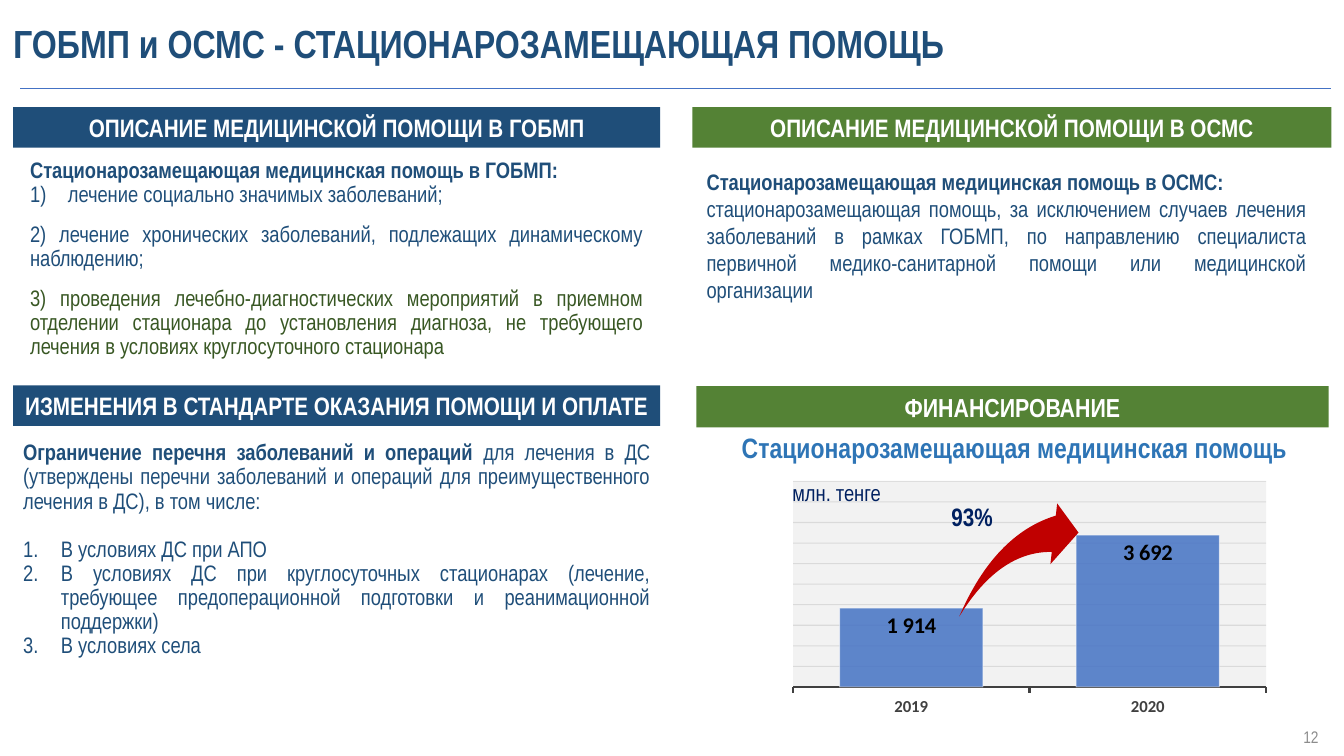
from lxml.etree import SubElement
from pptx import Presentation
from pptx.chart.data import CategoryChartData
from pptx.dml.color import RGBColor
from pptx.enum.chart import XL_CHART_TYPE, XL_LABEL_POSITION, XL_TICK_LABEL_POSITION, XL_TICK_MARK
from pptx.enum.shapes import MSO_CONNECTOR, MSO_SHAPE
from pptx.enum.text import MSO_ANCHOR, PP_ALIGN
from pptx.oxml import parse_xml
from pptx.oxml.ns import nsdecls, qn
from pptx.util import Pt

NAVY, GREEN, MOSS, INK, WHITE = "1F4E79", "548235", "385723", "002060", "FFFFFF"


def tint(code):
    """Turn a hex string into a colour."""
    return RGBColor.from_string(code)


def place(box):
    """Turn a box in points into lengths."""
    return [Pt(n) for n in box]


def shift(box, left, top, width, height):
    """Give a box in slide points from offsets within another box."""
    return box[0] + left, box[1] + top, width, height


def style(font, size, color, bold=False, name="Arial Narrow"):
    """Set the look of a font."""
    font.name, font.size, font.bold = name, Pt(size), bold
    font.color.rgb = tint(color)


def fade(root, *shares):
    """Give the colours under an element their opacity in percent."""
    for node, share in zip(list(root.iter(qn("a:srgbClr"))), shares):
        SubElement(node, qn("a:alpha"), val=str(share * 1000))


def label(shape, text, size, color, bold=True, align=PP_ALIGN.CENTER):
    """Write one line of text in a shape, centred in height."""
    frame = shape.text_frame
    frame.vertical_anchor = MSO_ANCHOR.MIDDLE
    para = frame.paragraphs[0]
    para.text, para.alignment = text, align
    style(para.font, size, color, bold)
    return para


def form(slide, box, kind, fill=None):
    """Add a preset shape without outline or shadow."""
    shape = slide.shapes.add_shape(kind, *place(box))
    shape.shadow.inherit = False
    shape.line.fill.background()
    if fill:
        shape.fill.solid()
        shape.fill.fore_color.rgb = tint(fill)
    else:
        shape.fill.background()
    return shape


def head(slide, box, text, fill, size=18):
    """Draw a coloured section bar."""
    label(form(slide, box, MSO_SHAPE.RECTANGLE, fill), text, size, WHITE)


def body(slide, box, rows, pitch):
    """Write justified rows of (parts, gap, list type, colour)."""
    frame = slide.shapes.add_textbox(*place(box)).text_frame
    frame.word_wrap = True
    for i, (parts, gap, mark, color) in enumerate(rows):
        para = frame.add_paragraph() if i else frame.paragraphs[0]
        para.alignment, para.line_spacing = PP_ALIGN.JUSTIFY, pitch
        para.space_before = Pt(gap)
        style(para.font, 16, color)
        for text, bold in parts:
            run = para.add_run()
            run.text = text
            style(run.font, 16, color, bold)
        if mark:
            props = para._p.get_or_add_pPr()
            props.set("marL", str(Pt(27)))
            props.set("indent", str(Pt(-27)))
            bullet = parse_xml(f'<a:buAutoNum {nsdecls("a")} type="{mark}"/>')
            props.insert_element_before(bullet, "a:tabLst", "a:defRPr", "a:extLst")


def top(slide, box):
    """Place the title and the rule under it."""
    title = slide.shapes.title
    title.left, title.top, title.width, title.height = place(shift(box, 2.2, 15.8, 960, 33.8))
    para = label(title, "ГОБМП и ОСМС - СТАЦИОНАРОЗАМЕЩАЮЩАЯ ПОМОЩЬ", 28, NAVY, align=PP_ALIGN.LEFT)
    para.line_spacing = 0.9
    left, level = box[0] + 14.4, box[1] + 63.4
    rule = slide.shapes.add_connector(MSO_CONNECTOR.STRAIGHT, *place((left + 936, level, left, level)))
    rule.line.color.rgb, rule.line.width = tint("4472C4"), Pt(0.5)
    SubElement(rule._element.spPr, qn("a:effectLst"))


def graph(slide, box):
    """Draw the column chart of funding."""
    data = CategoryChartData(number_format="#\\ ##0")
    data.categories = ["2019", "2020"]
    data.add_series("Series 1", (1914, 3692))
    chart = slide.shapes.add_chart(XL_CHART_TYPE.COLUMN_CLUSTERED, *place(box), data).chart
    chart.has_legend = chart.has_title = False
    style(chart.font, 10, "000000", name="Calibri")
    years, sums = chart.category_axis, chart.value_axis
    style(years.tick_labels.font, 12, "404040", True, "Calibri")
    years.tick_label_position = XL_TICK_LABEL_POSITION.LOW
    years.major_tick_mark = XL_TICK_MARK.OUTSIDE
    years.format.line.color.rgb, years.format.line.width = tint("404040"), Pt(1.5)
    sums.visible, sums.has_major_gridlines = False, True
    sums.minimum_scale, sums.maximum_scale, sums.major_unit = 0, 5000, 500
    grid = sums.major_gridlines.format.line
    grid.color.rgb, grid.width = tint("0D0D0D"), Pt(0.75)
    plot = chart.plots[0]
    plot.gap_width, plot.vary_by_categories = 65, False
    bars = plot.series[0]
    bars.format.fill.solid()
    bars.format.fill.fore_color.rgb = tint("4472C4")
    bars.format.line.color.rgb, bars.format.line.width = tint(WHITE), Pt(0.75)
    tags = bars.data_labels
    tags.show_value, tags.position = True, XL_LABEL_POSITION.INSIDE_END
    tags.number_format, tags.number_format_is_linked = "#\\ ##0", False
    style(tags.font, 16, "000000", True, "Calibri")
    area = chart._chartSpace.find(".//" + qn("c:plotArea"))
    fade(area.find(".//" + qn("c:majorGridlines")), 10)
    fade(area.find(".//" + qn("c:ser")).find(qn("c:spPr")), 85, 50)
    for old in area.findall(qn("c:layout")):
        area.remove(old)
    layout = parse_xml(f'<c:layout {nsdecls("c")}><c:manualLayout/></c:layout>')
    for tag, val in (("layoutTarget", "inner"), ("xMode", "edge"), ("yMode", "edge"),
                     ("x", "0.067"), ("y", "0.047"), ("w", "0.933"), ("h", "0.826")):
        SubElement(layout[0], qn("c:" + tag), val=val)
    area.insert(0, layout)
    area.append(parse_xml(f'<c:spPr {nsdecls("c", "a")}><a:solidFill><a:srgbClr val="F2F2F2"/>'
                          '</a:solidFill></c:spPr>'))


def funds(slide, box):
    """Place the funding bar, chart and its marks."""
    graph(slide, shift(box, 44.7, 59.7, 362.9, 177.8))
    head(slide, shift(box, 0, 0, box[2], 29.5), "ФИНАНСИРОВАНИЕ", GREEN, 18.6)
    arrow = form(slide, shift(box, 197.3, 79.2, 69.8, 94.3), MSO_SHAPE.SWOOSH_ARROW, "C00000")
    arrow.rotation = 12.8
    arrow.adjustments[0], arrow.adjustments[1] = 0.275, 0.265
    for spot, text, size, bold in (((158.4, 80.6, 77, 25.2), "93%", 18, True),
                                   ((38.9, 63.3, 122.4, 25.2), "млн. тенге", 16, False)):
        note = form(slide, shift(box, *spot), MSO_SHAPE.RIGHT_ARROW)
        note.adjustments[0], note.adjustments[1] = 1, 0
        label(note, text, size, INK, bold)
    name = slide.shapes.add_textbox(*place(shift(box, 25.2, 28, 411.8, 31.7)))
    label(name, "Стационарозамещающая медицинская помощь", 20, "2E75B6", align=PP_ALIGN.LEFT)


def part(slide, box, text, fill, inset, rows, pitch=0.9):
    """Place a section bar with its text at an inset."""
    head(slide, shift(box, 0, 0, box[2], 29), text, fill)
    body(slide, shift(box, *inset), rows, pitch)


def foot(slide, box):
    """Write the page number."""
    label(slide.shapes.add_textbox(*place(box)), "12", 12, "8C8C8C", False, PP_ALIGN.RIGHT)


def main():
    """Build and save the slide."""
    deck = Presentation()
    deck.slide_width, deck.slide_height = Pt(960), Pt(540)
    slide = deck.slides.add_slide(deck.slide_layouts[5])
    top(slide, (0, 0, 960, 70))
    part(slide, (9.4, 76.5, 462.2, 190), "ОПИСАНИЕ МЕДИЦИНСКОЙ ПОМОЩИ В ГОБМП", NAVY,
         (5, 33.7, 452.2, 155.5), [
        ([("Стационарозамещающая медицинская помощь в ГОБМП:", True)], 0, None, NAVY),
        ([("лечение социально значимых заболеваний;", False)], 0, "arabicParenR", NAVY),
        ([("2) лечение хронических заболеваний, подлежащих динамическому наблюдению;", False)],
         11, None, NAVY),
        ([("3) проведения лечебно-диагностических мероприятий в приемном отделении стационара "
           "до установления диагноза, не требующего лечения в условиях круглосуточного "
           "стационара", False)], 11, None, MOSS)])
    part(slide, (494.6, 76.5, 456.5, 165), "ОПИСАНИЕ МЕДИЦИНСКОЙ ПОМОЩИ В ОСМС", GREEN,
         (3, 40.2, 442.8, 123.8), [
        ([("Стационарозамещающая медицинская помощь в ОСМС:", True)], 0, None, NAVY),
        ([("стационарозамещающая помощь, за исключением случаев лечения заболеваний в рамках "
           "ГОБМП, по направлению специалиста первичной медико-санитарной помощи или "
           "медицинской организации", False)], 0, None, NAVY)], 1)
    part(slide, (9.4, 275.2, 462.2, 222), "ИЗМЕНЕНИЯ В СТАНДАРТЕ ОКАЗАНИЯ ПОМОЩИ И ОПЛАТЕ", NAVY,
         (0, 36.6, 462.2, 185.8), [
        ([("Ограничение перечня заболеваний и операций ", True),
          ("для лечения в ДС (утверждены перечни заболеваний и операций для преимущественного "
           "лечения в ДС), в том числе:", False)], 0, None, NAVY),
        ([("В условиях ДС при АПО", False)], 17, "arabicPeriod", NAVY),
        ([("В условиях ДС при круглосуточных стационарах (лечение, требующее предоперационной "
           "подготовки и реанимационной поддержки)", False)], 0, "arabicPeriod", NAVY),
        ([("В условиях села", False)], 0, "arabicPeriod", NAVY)])
    funds(slide, (497.5, 275.8, 451.5, 240))
    foot(slide, (733, 512, 216, 28.8))
    deck.save("out.pptx")


if __name__ == "__main__":
    main()
